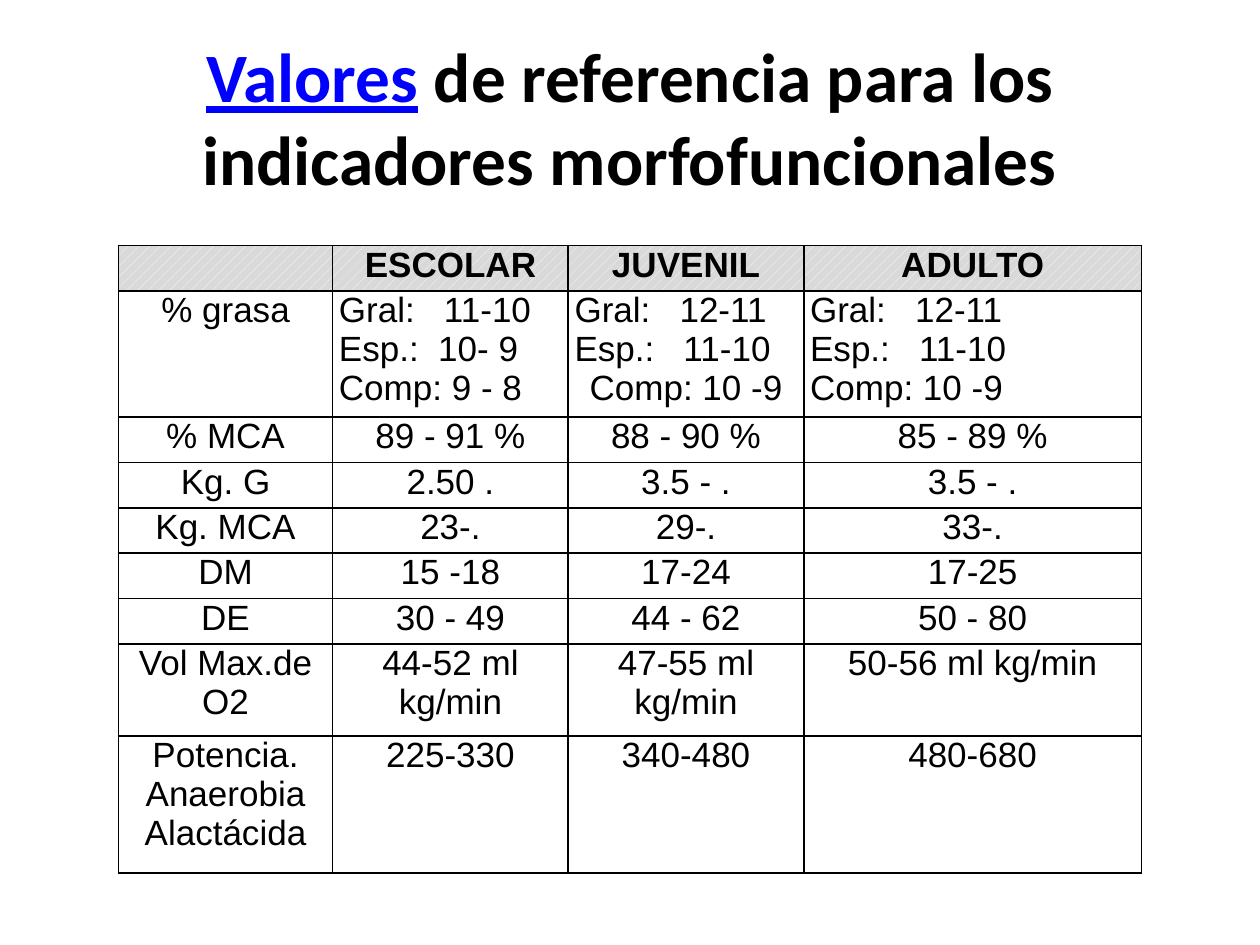
from dataclasses import dataclass

from lxml import etree
from pptx import Presentation
from pptx.dml.color import RGBColor
from pptx.enum.dml import MSO_PATTERN
from pptx.enum.text import MSO_ANCHOR, PP_ALIGN
from pptx.oxml.ns import qn
from pptx.util import Inches, Pt

CENTER, JUSTIFY = PP_ALIGN.CENTER, PP_ALIGN.JUSTIFY
MIDDLE = MSO_ANCHOR.MIDDLE
HATCH = MSO_PATTERN.PERCENT_20


@dataclass(frozen=True)
class Theme:
    ink: str = "000000"
    link: str = "0000FF"
    white: str = "FFFFFF"
    header: str = "D9D9D9"
    title_font: str = "Calibri"
    table_font: str = "Arial"
    title_size: float = 39.6
    table_size: float = 20
    border: float = 1


theme = Theme()


def write(paragraph, text, font=theme.table_font, size=theme.table_size,
          color=theme.ink, bold=False, underline=False, align=CENTER):
    paragraph.alignment = align
    run = paragraph.add_run()
    run.text = text
    run.font.name = font
    run.font.size = Pt(size)
    run.font.bold = bold
    run.font.underline = underline
    run.font.color.rgb = RGBColor.from_string(color)


def add_borders(cell):
    properties = cell._tc.get_or_add_tcPr()
    for side in ("a:lnL", "a:lnR", "a:lnT", "a:lnB"):
        line = etree.SubElement(properties, qn(side), w=str(Pt(theme.border)))
        fill = etree.SubElement(line, qn("a:solidFill"))
        etree.SubElement(fill, qn("a:srgbClr"), val=theme.ink)


presentation = Presentation()
presentation.slide_width = Inches(10)
presentation.slide_height = Inches(7.5)
slide = presentation.slides.add_slide(presentation.slide_layouts[6])

# Title
title = slide.shapes.add_textbox(Inches(0.5), Inches(0.3), Inches(9), Inches(1.25))
title.text_frame.word_wrap = True
title.text_frame.vertical_anchor = MIDDLE
heading = title.text_frame.paragraphs[0]
title_format = dict(font=theme.title_font, size=theme.title_size, bold=True)
write(heading, "Valores", color=theme.link, underline=True, **title_format)
write(heading, " de referencia para los indicadores morfofuncionales", **title_format)

# Reference values, one row per indicator
rows = [
    ("", "ESCOLAR", "JUVENIL", "ADULTO"),
    ("% grasa",
     "Gral:   11-10\nEsp.:  10- 9\nComp: 9 - 8",
     "Gral:   12-11\nEsp.:   11-10\nComp: 10 -9",
     "Gral:   12-11\nEsp.:   11-10\nComp: 10 -9"),
    ("% MCA", "89 - 91 %", "88 - 90 %", "85 - 89 %"),
    ("Kg. G", "2.50 .", "3.5 - .", "3.5 - ."),
    ("Kg. MCA", "23-.", "29-.", "33-."),
    ("DM", "15 -18", "17-24", "17-25"),
    ("DE", "30 - 49", "44 - 62", "50 - 80"),
    ("Vol Max.de O2", "44-52 ml kg/min", "47-55 ml kg/min", "50-56 ml kg/min"),
    ("Potencia. Anaerobia Alactácida", "225-330", "340-480", "480-680"),
]
column_widths = [1.7, 1.87, 1.87, 2.68]
row_heights = [0.36, 1] + [0.36] * 5 + [0.73, 1.09]
centered_line = (1, 2, 2)  # row, column, line of the one centred "Comp" entry

# Table
table = slide.shapes.add_table(
    len(rows), len(column_widths), Inches(0.94), Inches(1.95),
    Inches(sum(column_widths)), Inches(sum(row_heights))).table
for column, width in zip(table.columns, column_widths):
    column.width = Inches(width)
for row, height in zip(table.rows, row_heights):
    row.height = Inches(height)

for r, values in enumerate(rows):
    for c, value in enumerate(values):
        cell = table.cell(r, c)
        cell.margin_left = cell.margin_right = Inches(0.05)
        cell.margin_top = cell.margin_bottom = 0
        add_borders(cell)
        if r == 0:
            cell.fill.patterned()
            cell.fill.pattern = HATCH
            cell.fill.fore_color.rgb = RGBColor.from_string(theme.white)
            cell.fill.back_color.rgb = RGBColor.from_string(theme.header)
        else:
            cell.fill.background()
        lines = value.split("\n") if value else []
        for i, text in enumerate(lines):
            frame = cell.text_frame
            paragraph = frame.paragraphs[0] if i == 0 else frame.add_paragraph()
            justified = len(lines) > 1 and (r, c, i) != centered_line
            write(paragraph, text, bold=r == 0, align=JUSTIFY if justified else CENTER)

presentation.save("out.pptx")
